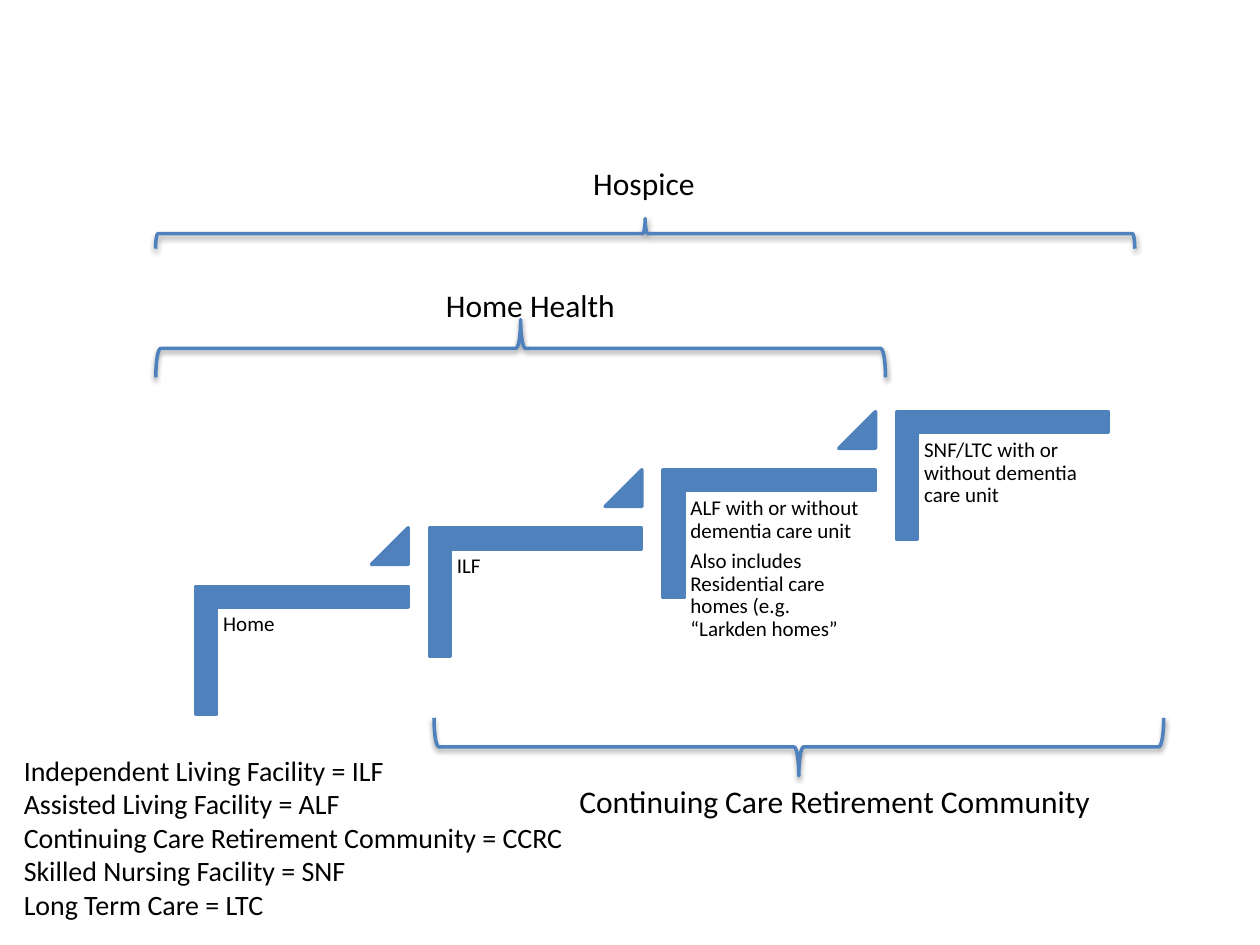
"""Build a slide of senior care levels as rising steps with bracketed services."""
from dataclasses import dataclass

from lxml import etree
from pptx import Presentation
from pptx import util as u
from pptx.dml.color import RGBColor
from pptx.enum import shapes, text
from pptx.oxml import parse_xml
from pptx.oxml.ns import nsdecls

COLORS = {"blue": "4F81BD", "black": "000000"}
FONT = "Calibri"
STEP_LEFT, STEP_TOP = 4.8, 10.97
STEP_DX, STEP_DY = 4.71, -1.17


@dataclass
class Label:
    left: float
    top: float
    width: float
    height: float
    lines: list[str]
    size: int = 18


@dataclass
class Brace:
    left: float
    top: float
    width: float
    height: float
    rotation: int


STEPS = [
    ["Home"],
    ["ILF"],
    ["ALF with or without dementia care unit",
     "Also includes Residential care homes (e.g. “Larkden homes”"],
    ["SNF/LTC with or without dementia care unit"],
]
BRACES = [
    Brace(12.7, -5.16, 0.61, 19.74, 90),
    Brace(9.91, -0.33, 1.17, 14.71, 90),
    Brace(15.52, 7.7, 1.17, 14.71, 270),
]
LABELS = [
    Label(11.71, 3.18, 2.59, 1.02, ["Hospice"]),
    Label(8.74, 5.64, 3.96, 1.02, ["Home Health"]),
    Label(11.43, 15.65, 10.95, 1.02, ["Continuing Care Retirement Community"]),
    Label(0.23, 15.06, 11.51, 3.68, [
        "Independent Living Facility = ILF",
        "Assisted Living Facility = ALF",
        "Continuing Care Retirement Community = CCRC",
        "Skilled Nursing Facility = SNF",
        "Long Term Care = LTC",
    ], 16),
]


def rgb(name: str) -> RGBColor:
    return RGBColor.from_string(COLORS[name])


def add_shape(s, kind, left: float, top: float, width: float, height: float):
    sp = s.shapes.add_shape(kind, u.Cm(left), u.Cm(top), u.Cm(width), u.Cm(height))
    sp.shadow.inherit = False
    sp.line.color.rgb = rgb("blue")
    sp.line.width = u.Pt(2)
    return sp


def add_solid(s, kind, left: float, top: float, width: float, height: float):
    sp = add_shape(s, kind, left, top, width, height)
    sp.fill.solid()
    sp.fill.fore_color.rgb = rgb("blue")
    return sp


def add_label(s, label: Label):
    sp = s.shapes.add_textbox(u.Cm(label.left), u.Cm(label.top),
                              u.Cm(label.width), u.Cm(label.height))
    tf = sp.text_frame
    tf.word_wrap = False
    tf.auto_size = text.MSO_AUTO_SIZE.SHAPE_TO_FIT_TEXT
    tf.text = "\n".join(label.lines)
    for p in tf.paragraphs:
        p.font.name = FONT
        p.font.size = u.Pt(label.size)
        p.font.color.rgb = rgb("black")
    return tf


def add_step(s, index: int, lines: list[str]) -> None:
    left = STEP_LEFT + index * STEP_DX
    top = STEP_TOP + index * STEP_DY
    sp = add_solid(s, shapes.MSO_SHAPE.CORNER, left, top, 2.57, 4.27)
    sp.rotation = 90
    sp.adjustments[0] = sp.adjustments[1] = 0.161

    tf = add_label(s, Label(left - 0.43, top + 1.27, 3.86, 3.38, lines, 12))
    tf.word_wrap = True
    tf.auto_size = text.MSO_AUTO_SIZE.NONE
    tf.margin_left = tf.margin_right = tf.margin_top = tf.margin_bottom = u.Cm(0.13)
    for p in tf.paragraphs:
        p.line_spacing = 0.9
        p.space_after = u.Pt(4.2)

    if index < len(STEPS) - 1:
        sp = add_solid(s, shapes.MSO_SHAPE.ISOSCELES_TRIANGLE,
                       left + 2.69, top - 0.33, 0.74, 0.74)
        sp.adjustments[0] = 1


def add_brace(s, brace: Brace) -> None:
    sp = add_shape(s, shapes.MSO_SHAPE.LEFT_BRACE,
                   brace.left, brace.top, brace.width, brace.height)
    sp.rotation = brace.rotation
    sp.fill.background()
    effects = sp._element.spPr.find("{*}effectLst")
    shadow = parse_xml(
        f'<a:outerShdw {nsdecls("a")} blurRad="{u.Pt(3.1)}" dist="{u.Pt(1.6)}" '
        'dir="5400000" rotWithShape="0"/>')
    color = etree.SubElement(shadow, shadow.tag.replace("outerShdw", "srgbClr"),
                             val=COLORS["black"])
    etree.SubElement(color, shadow.tag.replace("outerShdw", "alpha"), val="38000")
    effects.append(shadow)


def main() -> None:
    prs = Presentation()
    prs.slide_width, prs.slide_height = u.Cm(25.4), u.Cm(19.05)
    s = prs.slides.add_slide(prs.slide_layouts[6])
    for index, lines in enumerate(STEPS):
        add_step(s, index, lines)
    for brace in BRACES:
        add_brace(s, brace)
    for label in LABELS:
        add_label(s, label)
    prs.save("out.pptx")


if __name__ == "__main__":
    main()
